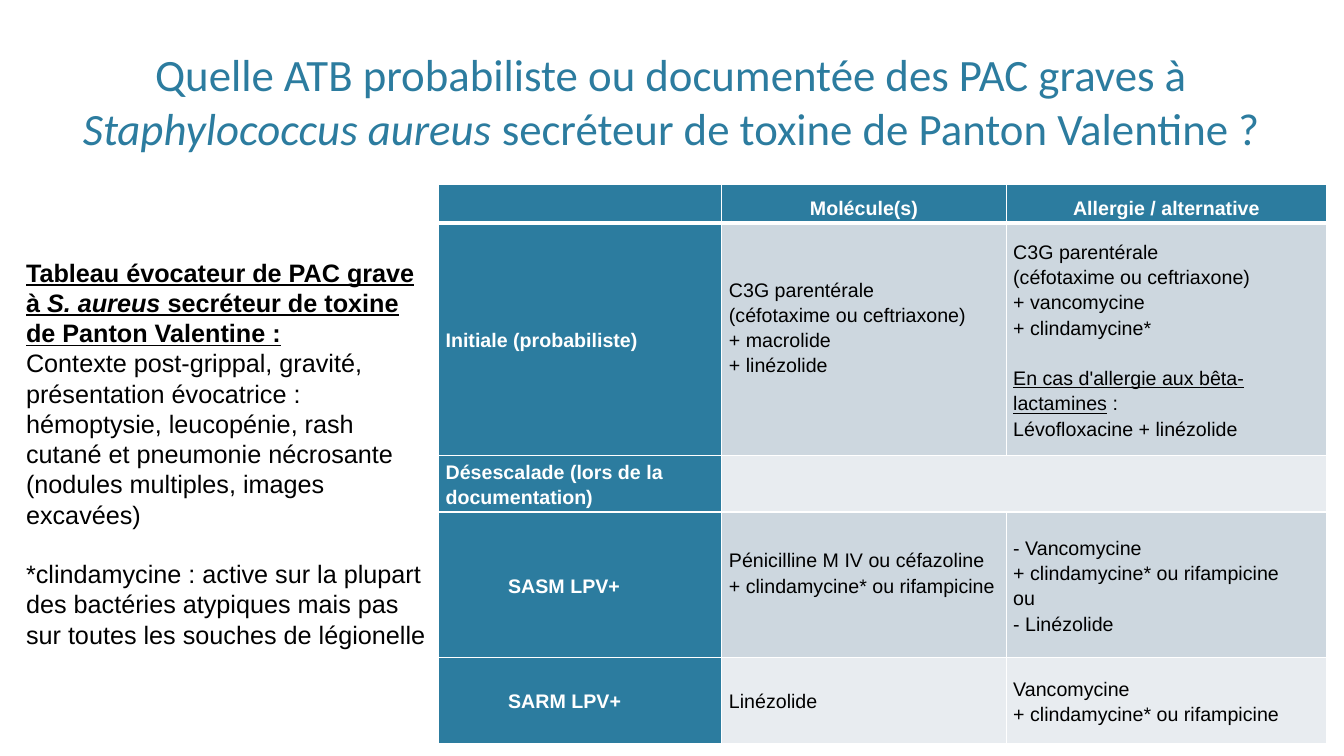
from dataclasses import dataclass

from lxml.etree import SubElement
from pptx import Presentation
from pptx.dml.color import RGBColor
from pptx.enum.text import MSO_ANCHOR, PP_ALIGN
from pptx.oxml.ns import qn
from pptx.util import Pt

PX = 9144
TEAL, WHITE, BLACK = "2C7C9F", "FFFFFF", "000000"
DARK_BAND, LIGHT_BAND = "CDD7DF", "E8ECF0"
COLUMN_WIDTHS = (281, 282, 318)
ROW_HEIGHTS = (38, 231, 56, 144, 86)
LINE_GAP = 18


@dataclass(frozen=True)
class Run:
    text: str
    italic: bool = False
    underline: bool = False
    bold: bool = False


@dataclass(frozen=True)
class Line:
    runs: tuple[Run, ...]
    before: int = 0


@dataclass(frozen=True)
class Style:
    font: str
    size: int
    color: str
    bold: bool = False
    align: PP_ALIGN = PP_ALIGN.LEFT
    spacing: float = 1.0
    indent: int = 0


@dataclass(frozen=True)
class Entry:
    lines: tuple[Line, ...]
    fill: str
    style: Style
    bottom: int = 0


def px(length: int) -> int:
    return length * PX


def rgb(color: str) -> RGBColor:
    return RGBColor.from_string(color)


def plain(*texts: str) -> tuple[Line, ...]:
    return tuple(Line((Run(text),)) for text in texts)


def write(frame, lines: tuple[Line, ...], style: Style) -> None:
    for index, line in enumerate(lines):
        paragraph = frame.paragraphs[0] if index == 0 else frame.add_paragraph()
        paragraph.alignment = style.align
        paragraph.line_spacing = style.spacing
        if line.before:
            paragraph.space_before = Pt(line.before)
        if style.indent:
            properties = paragraph._p.get_or_add_pPr()
            properties.set("marL", str(px(style.indent)))
            properties.set("indent", "0")
        for part in line.runs:
            run = paragraph.add_run()
            run.text = part.text
            run.font.name = style.font
            run.font.size = Pt(style.size)
            run.font.color.rgb = rgb(style.color)
            run.font.bold = style.bold or part.bold
            run.font.italic = part.italic
            run.font.underline = part.underline


def add_text(slide, box: tuple[int, int, int, int], lines: tuple[Line, ...],
             style: Style, anchor: MSO_ANCHOR) -> None:
    frame = slide.shapes.add_textbox(*map(px, box)).text_frame
    frame.word_wrap = True
    frame.vertical_anchor = anchor
    write(frame, lines, style)


def set_borders(cell, top: int, bottom: int) -> None:
    properties = cell._tc.get_or_add_tcPr()
    for side, points in (("L", 1), ("R", 1), ("T", top), ("B", bottom)):
        border = SubElement(properties, qn(f"a:ln{side}"), w=str(Pt(points)))
        fill = SubElement(border, qn("a:solidFill"))
        SubElement(fill, qn("a:srgbClr"), val=WHITE)


def fill_cell(cell, entry: Entry, row: int) -> None:
    set_borders(cell, 3 if row == 1 else 1, 3 if row == 0 else 1)
    cell.fill.solid()
    cell.fill.fore_color.rgb = rgb(entry.fill)
    cell.vertical_anchor = MSO_ANCHOR.MIDDLE
    cell.margin_left = cell.margin_right = px(7)
    cell.margin_top, cell.margin_bottom = 0, px(entry.bottom)
    cell.text_frame.paragraphs[0].font.size = Pt(entry.style.size)
    write(cell.text_frame, entry.lines, entry.style)


def add_treatments(slide, rows: tuple[tuple[Entry, ...], ...]) -> None:
    table = slide.shapes.add_table(
        len(ROW_HEIGHTS), len(COLUMN_WIDTHS), px(435), px(183),
        px(sum(COLUMN_WIDTHS)), px(sum(ROW_HEIGHTS))).table
    for column, width in zip(table.columns, COLUMN_WIDTHS):
        column.width = px(width)
    for row, height in zip(table.rows, ROW_HEIGHTS):
        row.height = px(height)
    for row, entries in enumerate(rows):
        for column, entry in enumerate(entries):
            fill_cell(table.cell(row, column), entry, row)
    table.cell(2, 1).merge(table.cell(2, 2))


TITLE = Style("Calibri", 32, TEAL, align=PP_ALIGN.CENTER)
NOTE = Style("Arial", 18, BLACK)
HEADER = Style("Arial", 14, WHITE, True, PP_ALIGN.CENTER, 1.5)
PHASE = Style("Arial", 14, WHITE, True, spacing=1.15)
STRAIN = Style("Arial", 14, WHITE, True, spacing=1.15, indent=62)
DRUG = Style("Arial", 14, BLACK, spacing=1.15)

QUESTION = (Line((
    Run("Quelle ATB probabiliste ou documentée des PAC graves à "),
    Run("Staphylococcus aureus ", italic=True),
    Run("secréteur de toxine de Panton Valentine ?"))),)

CONTEXT = (
    Line((Run("Tableau évocateur de PAC grave à ", underline=True, bold=True),
          Run("S. aureus ", italic=True, underline=True, bold=True),
          Run("secréteur de toxine de Panton Valentine :", underline=True, bold=True))),
    *plain("Contexte post-grippal, gravité, présentation évocatrice : hémoptysie, "
           "leucopénie, rash cutané et pneumonie nécrosante (nodules multiples, "
           "images excavées)"),
    Line((Run("*clindamycine : active sur la plupart des bactéries atypiques mais "
              "pas sur toutes les souches de légionelle"),), before=21))

CEPHALOSPORIN = plain("C3G parentérale", "(céfotaxime ou ceftriaxone)")
COMBINATION = "+ clindamycine* ou rifampicine"
ALLERGY = Line((Run("En cas d'allergie aux bêta-lactamines", underline=True), Run(" :")),
               before=LINE_GAP)

TREATMENTS = (
    tuple(Entry(plain(*heading), TEAL, HEADER)
          for heading in ((), ("Molécule(s)",), ("Allergie / alternative",))),
    (Entry(plain("Initiale (probabiliste)"), TEAL, PHASE),
     Entry(CEPHALOSPORIN + plain("+ macrolide", "+ linézolide"), DARK_BAND, DRUG, 25),
     Entry((*CEPHALOSPORIN, *plain("+ vancomycine", "+ clindamycine*"), ALLERGY,
            *plain("Lévofloxacine + linézolide")), DARK_BAND, DRUG)),
    (Entry(plain("Désescalade (lors de la documentation)"), TEAL, PHASE),
     Entry((), LIGHT_BAND, DRUG),
     Entry((), LIGHT_BAND, DRUG)),
    (Entry(plain("SASM LPV+"), TEAL, STRAIN),
     Entry(plain("Pénicilline M IV ou céfazoline", COMBINATION), DARK_BAND, DRUG, 25),
     Entry(plain("- Vancomycine", COMBINATION, "ou", "- Linézolide"), DARK_BAND, DRUG)),
    (Entry(plain("SARM LPV+"), TEAL, STRAIN),
     Entry(plain("Linézolide"), LIGHT_BAND, DRUG),
     Entry(plain("Vancomycine", COMBINATION), LIGHT_BAND, DRUG)),
)


def main() -> None:
    """Build the slide on antibiotic treatment of severe pneumonia."""
    presentation = Presentation()
    presentation.slide_width, presentation.slide_height = px(1333), px(750)
    slide = presentation.slides.add_slide(presentation.slide_layouts[6])
    add_text(slide, (16, 12, 1300, 146), QUESTION, TITLE, MSO_ANCHOR.BOTTOM)
    add_treatments(slide, TREATMENTS)
    add_text(slide, (16, 250, 419, 464), CONTEXT, NOTE, MSO_ANCHOR.TOP)
    presentation.save("out.pptx")


if __name__ == "__main__":
    main()
